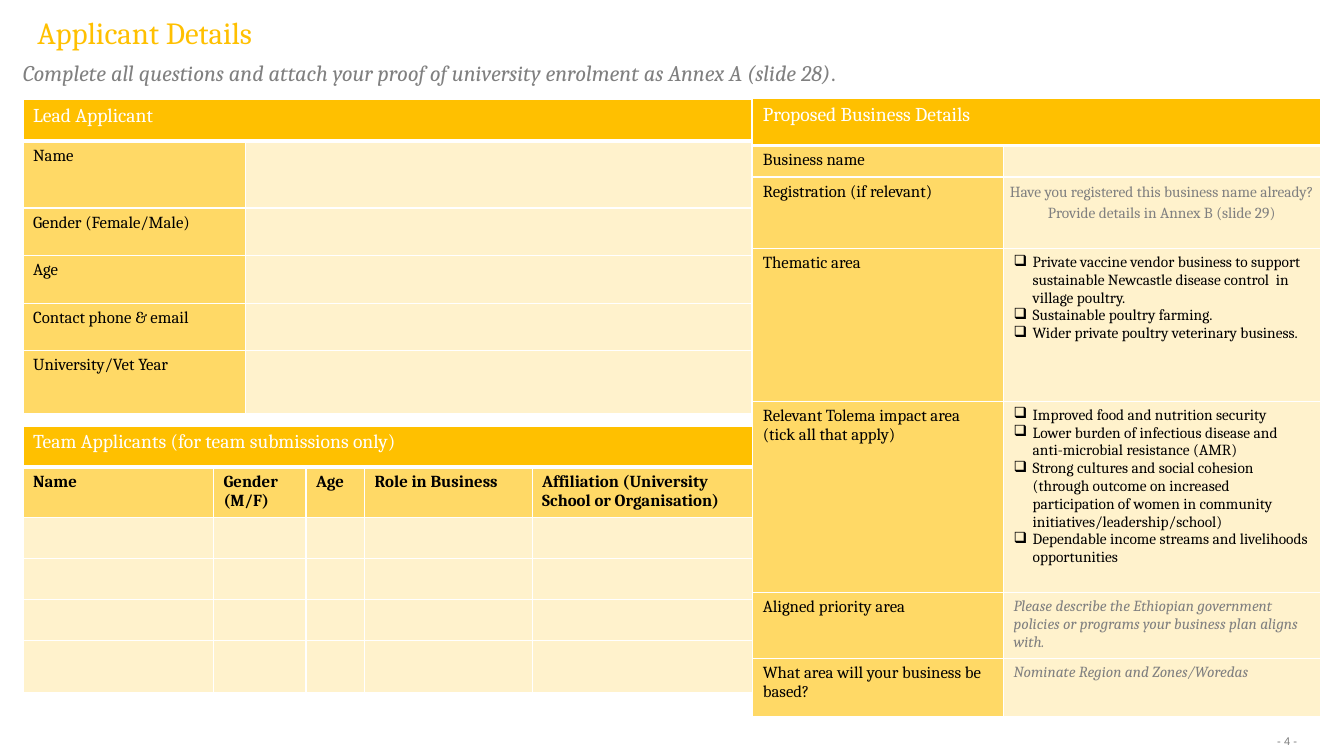
from lxml import etree
from pptx import Presentation
from pptx import util as u
from pptx.dml.color import RGBColor
from pptx.enum import text
from pptx.oxml import ns

COLORS = {"gold": "FFC000", "amber": "FFD966", "cream": "FFF2CC",
          "white": "FFFFFF", "black": "000000", "grey": "808080", "number": "7F7F7F"}
LABEL = {"size": 12, "color": "black"}
HEADING = {"size": 14, "color": "white"}
CHOICE = {"size": 11, "color": "black"}
HINT = {"size": 11, "color": "grey", "italic": True}
QUESTION = {"size": 11, "color": "grey"}

LEAD_LABELS = ["Name", "Gender (Female/Male)", "Age", "Contact phone & email", "University/Vet Year"]
TEAM_LABELS = ["Name", "Gender\n(M/F)", "Age", "Role in Business",
               "Affiliation (University School or Organisation)"]
BUSINESS_LABELS = ["Business name", "Registration (if relevant)", "Thematic area",
                   "Relevant Tolema impact area\n(tick all that apply)",
                   "Aligned priority area", "What area will your business be based?"]
REGISTRATION = "Have you registered this business name already? Provide details in Annex B (slide 29)"
THEMES = ["Private vaccine vendor business to support sustainable Newcastle disease control  in village poultry.",
          "Sustainable poultry farming.",
          "Wider private poultry veterinary business."]
IMPACTS = ["Improved food and nutrition security",
           "Lower burden of infectious disease and anti-microbial resistance (AMR)",
           "Strong cultures and social cohesion (through outcome on increased participation of women "
           "in community initiatives/leadership/school)",
           "Dependable income streams and livelihoods opportunities"]
PRIORITY = "Please describe the Ethiopian government policies or programs your business plan aligns with."
REGION = "Nominate Region and Zones/Woredas"


def rgb(name):
    """Return the named colour."""
    return RGBColor.from_string(COLORS[name])


def style(paragraph, size, color, bold=False, italic=False, face="Cambria"):
    """Set the font of a whole paragraph."""
    font = paragraph.font
    font.size, font.name, font.bold, font.italic = u.Pt(size), face, bold, italic
    font.color.rgb = rgb(color)


def add_border(cell, side, points):
    """Draw one white cell edge."""
    edge = etree.SubElement(cell._tc.get_or_add_tcPr(), ns.qn(f"a:{side}"), w=str(u.Pt(points)))
    fill = etree.SubElement(edge, ns.qn("a:solidFill"))
    etree.SubElement(fill, ns.qn("a:srgbClr"), val=COLORS["white"])


def format_cell(cell, fill, bottom=1):
    """Give a cell its edges, fill and compact empty text."""
    for side, points in (("lnL", 1), ("lnR", 1), ("lnT", 1), ("lnB", bottom)):
        add_border(cell, side, points)
    cell.fill.solid()
    cell.fill.fore_color.rgb = rgb(fill)
    etree.SubElement(cell.text_frame.paragraphs[0]._p, ns.qn("a:endParaRPr"), sz="1100")


def write(cell, content, **look):
    """Write styled paragraphs into a cell."""
    cell.text = content
    for paragraph in cell.text_frame.paragraphs:
        style(paragraph, **look)


def write_choices(cell, choices):
    """Write a list of tick boxes into a cell."""
    write(cell, "\n".join(choices), **CHOICE)
    for paragraph in cell.text_frame.paragraphs:
        properties = paragraph._p.get_or_add_pPr()
        indent = u.Cm(0.48)
        properties.set("marL", str(indent))
        properties.set("indent", str(-indent))
        bullet = etree.Element(ns.qn("a:buChar"), char="❑")
        properties.insert(0, bullet)


def add_form(slide, box, heading, widths, heights, is_label):
    """Place an empty form table under a full-width heading."""
    left, top = box
    form = slide.shapes.add_table(len(heights), len(widths), u.Cm(left), u.Cm(top),
                                  u.Cm(sum(widths)), u.Cm(sum(heights))).table
    form.first_row = form.horz_banding = False
    for column, width in zip(form.columns, widths):
        column.width = u.Cm(width)
    for row_number, (row, height) in enumerate(zip(form.rows, heights)):
        row.height = u.Cm(height)
        for column_number, cell in enumerate(row.cells):
            if row_number == 0:
                format_cell(cell, "gold", bottom=3)
            else:
                format_cell(cell, "amber" if is_label(row_number, column_number) else "cream")
    form.cell(0, 0).merge(form.cell(0, len(widths) - 1))
    write(form.cell(0, 0), heading, **HEADING)
    return form


def label_first_column(form, labels):
    """Fill the label column below the heading."""
    for row_number, label in enumerate(labels, 1):
        write(form.cell(row_number, 0), label, **LABEL)


def add_lead(slide, box):
    """Add the lead applicant form."""
    form = add_form(slide, box, "Lead Applicant", [5.61, 12.75],
                    [1.05, 1.68, 1.2, 1.2, 1.2, 1.57], lambda row, column: column == 0)
    label_first_column(form, LEAD_LABELS)


def add_team(slide, box):
    """Add the team applicants form."""
    form = add_form(slide, box, "Team Applicants (for team submissions only)",
                    [4.8, 2.33, 1.48, 4.22, 5.55],
                    [1.03, 1.2, 1.03, 1.03, 1.03, 1.33], lambda row, column: row == 1)
    for column_number, label in enumerate(TEAM_LABELS):
        write(form.cell(1, column_number), label, bold=True, **LABEL)


def add_business(slide, box):
    """Add the proposed business form."""
    form = add_form(slide, box, "Proposed Business Details", [6.32, 7.98],
                    [1.18, 0.79, 1.8, 3.85, 4.82, 1.58, 1.48], lambda row, column: column == 0)
    label_first_column(form, BUSINESS_LABELS)
    registration = form.cell(2, 1)
    write(registration, REGISTRATION, **QUESTION)
    registration.margin_left = registration.margin_right = u.Cm(0.1)
    registration.margin_top = registration.margin_bottom = u.Cm(0.1)
    question = registration.text_frame.paragraphs[0]
    question.alignment = text.PP_ALIGN.CENTER
    question.line_spacing, question.space_after = 1.15, u.Pt(10)
    write_choices(form.cell(3, 1), THEMES)
    write_choices(form.cell(4, 1), IMPACTS)
    write(form.cell(5, 1), PRIORITY, **HINT)
    write(form.cell(6, 1), REGION, **HINT)


def clear_margins(frame):
    """Let text fill its box from the top left."""
    frame.margin_left = frame.margin_right = frame.margin_top = frame.margin_bottom = 0
    frame.word_wrap = True
    frame.auto_size = text.MSO_AUTO_SIZE.NONE
    frame.vertical_anchor = text.MSO_ANCHOR.TOP


def add_title(slide, box):
    """Place the slide title."""
    title = slide.shapes.title
    title.left, title.top, title.width, title.height = map(u.Cm, box)
    title.text = "Applicant Details"
    clear_margins(title.text_frame)
    heading = title.text_frame.paragraphs[0]
    style(heading, 22, "gold")
    heading.alignment, heading.line_spacing = text.PP_ALIGN.LEFT, 0.9


def add_instruction(slide, box):
    """Place the instruction under the title."""
    frame = slide.shapes.add_textbox(*map(u.Cm, box)).text_frame
    clear_margins(frame)
    instruction = frame.paragraphs[0]
    style(instruction, 16, "grey", italic=True)
    instruction.add_run().text = ("Complete all questions and attach your proof of university "
                                  "enrolment as Annex A (slide 28)")
    stop = instruction.add_run()
    stop.text, stop.font.italic = ".", False


def add_page_number(slide, box):
    """Place the page number."""
    frame = slide.shapes.add_textbox(*map(u.Cm, box)).text_frame
    frame.word_wrap = True
    frame.vertical_anchor = text.MSO_ANCHOR.MIDDLE
    frame.text = "- 4 -"
    number = frame.paragraphs[0]
    style(number, 8, "number", face="Arial")
    number.alignment = text.PP_ALIGN.RIGHT


def main():
    """Build the applicant slide."""
    deck = Presentation()
    deck.slide_width, deck.slide_height = u.Cm(33.87), u.Cm(19.05)
    slide = deck.slides.add_slide(deck.slide_layouts[5])
    add_title(slide, (0.94, 0.46, 32, 0.84))
    add_page_number(slide, (31.14, 18.49, 1.8, 0.38))
    add_lead(slide, (0.58, 2.51))
    add_business(slide, (18.97, 2.49))
    add_instruction(slide, (0.58, 1.5, 32, 0.84))
    add_team(slide, (0.58, 10.74))
    deck.save("out.pptx")


if __name__ == "__main__":
    main()
